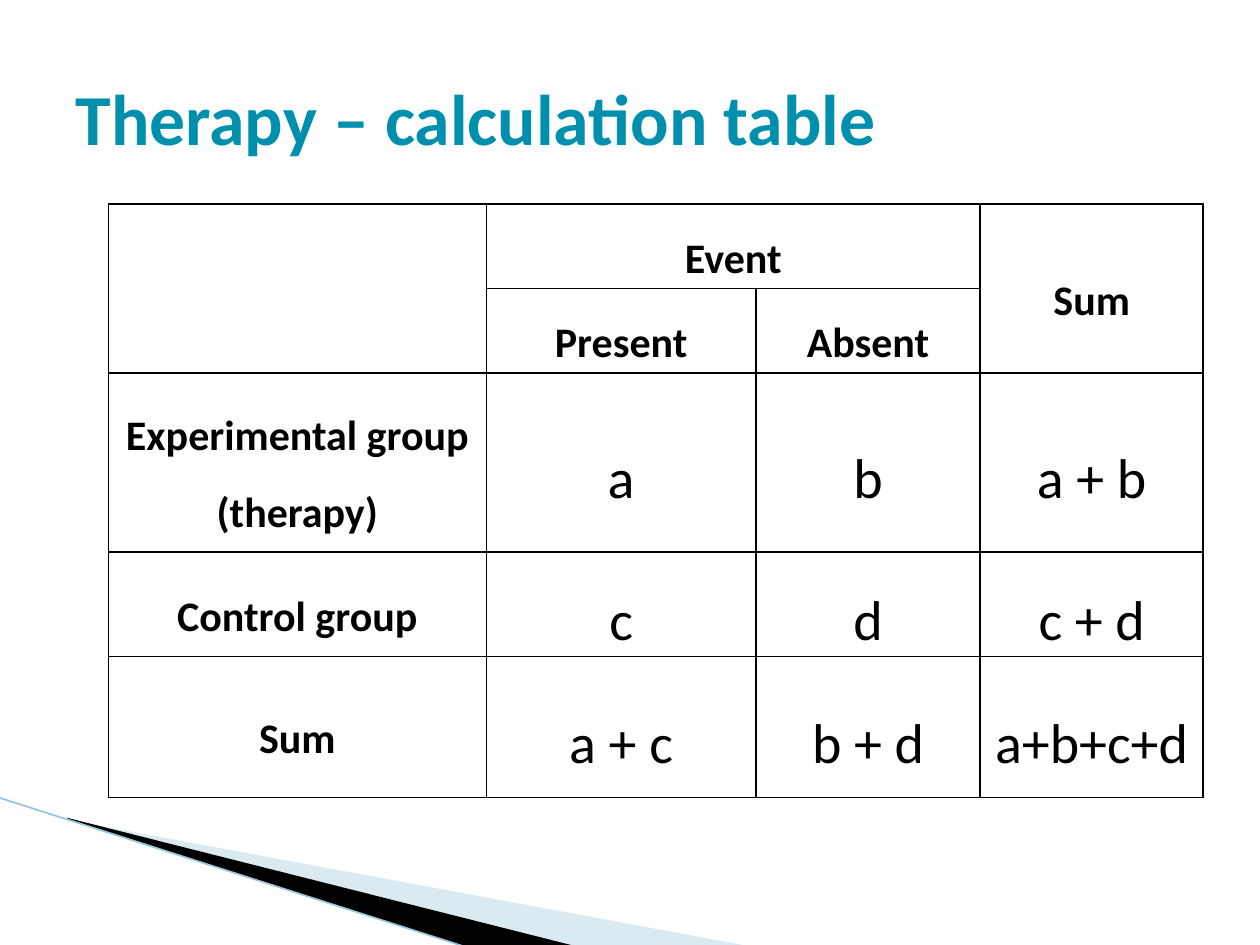
"""Build the therapy calculation table slide."""
from lxml.etree import SubElement
from pptx import Presentation
from pptx.dml.color import RGBColor
from pptx.enum.shapes import MSO_CONNECTOR
from pptx.enum.text import MSO_ANCHOR, PP_ALIGN
from pptx.oxml.ns import qn
from pptx.util import Pt

PX = 9144
BLACK = RGBColor(0x00, 0x00, 0x00)
TEAL = RGBColor(0x00, 0x8F, 0xAC)
PALE_BLUE = RGBColor(0xA0, 0xCB, 0xDC)
EDGE_BLUE = RGBColor(0x97, 0xC5, 0xD8)


def write(frame, text, size=24, bold=True, color=BLACK, align=PP_ALIGN.CENTER, spacing=1.5):
    frame.text = text
    frame.word_wrap = True
    paragraph = frame.paragraphs[0]
    paragraph.alignment = align
    paragraph.line_spacing = spacing
    font = paragraph.runs[0].font
    font.name = "Calibri"
    font.size = Pt(size)
    font.bold = bold
    font.color.rgb = color


def add_border(cell):
    properties = cell._tc.get_or_add_tcPr()
    for side in ("lnL", "lnR", "lnT", "lnB"):
        line = SubElement(properties, qn(f"a:{side}"), w=str(Pt(1)))
        fill = SubElement(line, qn("a:solidFill"))
        SubElement(fill, qn("a:srgbClr"), val=str(BLACK))


prs = Presentation()
prs.slide_width = 1000 * PX
prs.slide_height = 750 * PX
slide = prs.slides.add_slide(prs.slide_layouts[5])

wedges = [
    ([(55, 651), (595, 751), (456, 751), (55, 650)], PALE_BLUE, 40),
    ([(53, 649), (457, 751), (372, 752), (54, 650)], BLACK, 100),
]
for points, color, opacity in wedges:
    builder = slide.shapes.build_freeform(*points[0], scale=PX)
    builder.add_line_segments(points[1:], close=True)
    wedge = builder.convert_to_shape()
    wedge.shadow.inherit = False
    wedge.fill.solid()
    wedge.fill.fore_color.rgb = color
    wedge.line.fill.background()
    if opacity < 100:
        tint = wedge._element.spPr.find(qn("a:solidFill"))[0]
        SubElement(tint, qn("a:alpha"), val=str(opacity * 1000))

edge = slide.shapes.add_connector(
    MSO_CONNECTOR.STRAIGHT, -1 * PX, 633 * PX, 371 * PX, 752 * PX)
edge.line.color.rgb = EDGE_BLUE
edge.line.width = Pt(0.95)
SubElement(edge._element.spPr, qn("a:effectLst"))

title = slide.shapes.title
title.left, title.top, title.width, title.height = (n * PX for n in (50, 30, 900, 125))
title.text_frame.vertical_anchor = MSO_ANCHOR.MIDDLE
write(title.text_frame, "Therapy – calculation table", size=41, color=TEAL,
      align=PP_ALIGN.LEFT, spacing=1.0)

column_widths = [300, 214, 178, 177]
row_heights = [67, 67, 142, 83, 112]
rows = [
    ["", "Event", "", "Sum"],
    ["", "Present", "Absent", ""],
    ["Experimental group (therapy)", "a", "b", "a + b"],
    ["Control group", "c", "d", "c + d"],
    ["Sum", "a + c", "b + d", "a+b+c+d"],
]
outcomes = slide.shapes.add_table(
    len(rows), len(column_widths), 86 * PX, 162 * PX,
    sum(column_widths) * PX, sum(row_heights) * PX).table
outcomes.first_row = outcomes.horz_banding = False
for column, width in zip(outcomes.columns, column_widths):
    column.width = width * PX
for row, height in zip(outcomes.rows, row_heights):
    row.height = height * PX

for r, labels in enumerate(rows):
    for c, label in enumerate(labels):
        cell = outcomes.cell(r, c)
        add_border(cell)
        cell.fill.background()
        cell.vertical_anchor = MSO_ANCHOR.MIDDLE
        cell.margin_left = cell.margin_right = 7 * PX
        cell.margin_top = cell.margin_bottom = 0
        if label:
            is_header = r < 2 or c == 0
            write(cell.text_frame, label, size=24 if is_header else 32, bold=is_header)

for first, last in [((0, 0), (1, 0)), ((0, 1), (0, 2)), ((0, 3), (1, 3))]:
    outcomes.cell(*first).merge(outcomes.cell(*last))

prs.save("out.pptx")
